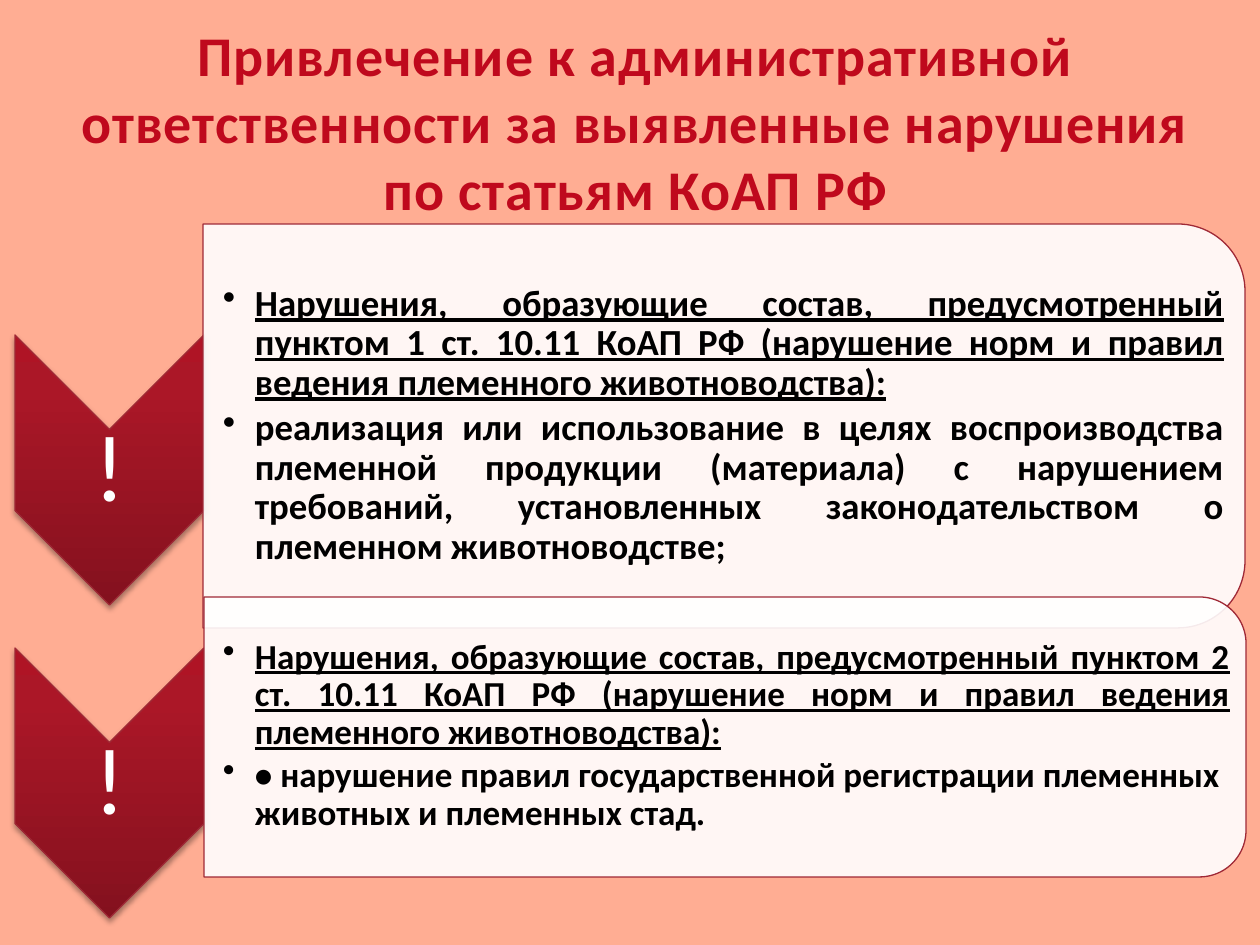
from lxml import etree
from pptx import Presentation
from pptx.dml.color import RGBColor
from pptx.enum.shapes import MSO_SHAPE
from pptx.enum.text import MSO_ANCHOR, MSO_AUTO_SIZE, PP_ALIGN
from pptx.oxml import parse_xml
from pptx.oxml.ns import nsdecls, qn
from pptx.util import Emu, Pt

CHEVRON, PANEL = MSO_SHAPE.CHEVRON, MSO_SHAPE.ROUND_2_SAME_RECTANGLE
CENTER, JUSTIFY, LEFT = PP_ALIGN.CENTER, PP_ALIGN.JUSTIFY, PP_ALIGN.LEFT
MIDDLE, NO_AUTOFIT = MSO_ANCHOR.MIDDLE, MSO_AUTO_SIZE.NONE

PEACH = RGBColor(0xFF, 0xAD, 0x93)
CRIMSON = RGBColor(0xBF, 0x09, 0x1D)
OUTLINE = RGBColor(0x9F, 0x29, 0x36)
WHITE = RGBColor(0xFF, 0xFF, 0xFF)
BLACK = RGBColor(0, 0, 0)
CHEVRON_STOPS = [(0, "84111E"), (80, "AB1727"), (100, "AF1425")]

TITLE = ("Привлечение к административной ответственности "
         "за выявленные нарушения по статьям КоАП РФ")
HEADING = ("Нарушения, образующие состав, предусмотренный пунктом {} ст. 10.11 КоАП РФ "
           "(нарушение норм и правил ведения племенного животноводства):")
# point, detail, detail alignment, text size, panel box, text box, chevron top
SECTIONS = [
    (1, "реализация или использование в целях воспроизводства племенной продукции "
        "(материала) с нарушением требований, установленных законодательством "
        "о племенном животноводстве;",
     JUSTIFY, 21, (203, 224, 1042, 404), (203, 244, 1022, 364), 335),
    (2, "• нарушение правил государственной регистрации племенных животных "
        "и племенных стад.",
     LEFT, 20, (204, 597, 1042, 280), (203, 610, 1028, 252), 648),
]


def px(length):
    return Emu(round(length * 914400 / 126))


def write(paragraph, text, size, color, bold=False, underline=False,
          align=CENTER, line_spacing=None, space_after=None, tracking=None):
    paragraph.alignment = align
    if line_spacing:
        paragraph.line_spacing = line_spacing
    if space_after:
        paragraph.space_after = Pt(space_after)
    run = paragraph.add_run()
    run.text = text
    font = run.font
    font.name, font.size, font.bold, font.underline = "Calibri", Pt(size), bold, underline
    font.color.rgb = color
    if tracking:
        run._r.get_or_add_rPr().set("spc", str(tracking))


def add_bullet(paragraph, indent):
    properties = paragraph._p.get_or_add_pPr()
    properties.set("marL", str(indent))
    properties.set("indent", str(-indent))
    etree.SubElement(properties, qn("a:buChar")).set("char", "•")


class Deck:
    def __init__(self):
        self.presentation = Presentation()
        self.presentation.slide_width = px(1260)
        self.presentation.slide_height = px(945)
        self.slide = self.presentation.slides.add_slide(self.presentation.slide_layouts[5])
        self.slide.background.fill.solid()
        self.slide.background.fill.fore_color.rgb = PEACH

    def title(self, text, left, top, width, height):
        title = self.slide.shapes.title
        title.left, title.top = px(left), px(top)
        title.width, title.height = px(width), px(height)
        frame = title.text_frame
        frame.auto_size, frame.vertical_anchor = NO_AUTOFIT, MIDDLE
        write(frame.paragraphs[0], text, 32, CRIMSON, bold=True, tracking=50)

    def turned_shape(self, kind, left, top, width, height):
        """Add a shape turned by 90 degrees that covers the given box once turned."""
        shift = (width - height) / 2
        shape = self.slide.shapes.add_shape(
            kind, px(left + shift), px(top - shift), px(height), px(width))
        shape.rotation = 90
        shape.shadow.inherit = False
        shape.line.color.rgb = OUTLINE
        shape.line.width = Pt(0.75)
        return shape

    def panel(self, left, top, width, height):
        panel = self.turned_shape(PANEL, left, top, width, height)
        panel.fill.solid()
        panel.fill.fore_color.rgb = WHITE
        color = panel._element.spPr.find(qn("a:solidFill"))[0]
        etree.SubElement(color, qn("a:alpha")).set("val", "90000")

    def chevron(self, left, top, width, height):
        chevron = self.turned_shape(CHEVRON, left, top, width, height)
        properties = chevron._element.spPr
        stops = "".join(f'<a:gs pos="{position * 1000}"><a:srgbClr val="{color}"/></a:gs>'
                        for position, color in CHEVRON_STOPS)
        properties.find(qn("a:prstGeom")).addnext(parse_xml(
            f'<a:gradFill {nsdecls("a")} rotWithShape="1"><a:gsLst>{stops}</a:gsLst>'
            '<a:lin ang="10800000" scaled="0"/></a:gradFill>'))
        properties.find(qn("a:effectLst")).append(parse_xml(
            f'<a:outerShdw {nsdecls("a")} blurRad="40000" dist="23000" dir="5400000" '
            'rotWithShape="0"><a:srgbClr val="000000"><a:alpha val="35000"/></a:srgbClr>'
            '</a:outerShdw>'))

    def text_frame(self, left, top, width, height, inset_left, inset):
        box = self.slide.shapes.add_textbox(px(left), px(top), px(width), px(height))
        frame = box.text_frame
        frame.word_wrap, frame.vertical_anchor = True, MIDDLE
        frame.margin_left = px(inset_left)
        frame.margin_top = frame.margin_right = frame.margin_bottom = px(inset)
        return frame

    def mark(self, left, top, width, height):
        frame = self.text_frame(left, top, width, height, 5, 5)
        write(frame.paragraphs[0], "!", 54, WHITE, line_spacing=0.9)

    def bullets(self, heading, detail, detail_align, size, box):
        frame = self.text_frame(*box, 20, 1)
        for paragraph, text, underline, align in (
                (frame.paragraphs[0], heading, True, JUSTIFY),
                (frame.add_paragraph(), detail, False, detail_align)):
            write(paragraph, text, size, BLACK, bold=True, underline=underline,
                  align=align, line_spacing=0.9, space_after=3)
            add_bullet(paragraph, px(32))


def main():
    deck = Deck()
    deck.title(TITLE, 35, 38, 1201, 166)
    for point, detail, align, size, panel_box, text_box, chevron_top in SECTIONS:
        deck.chevron(15, chevron_top, 189, 270)
        deck.mark(15, chevron_top + 95, 189, 81)
        deck.panel(*panel_box)
        deck.bullets(HEADING.format(point), detail, align, size, text_box)
    deck.presentation.save("out.pptx")


if __name__ == "__main__":
    main()
